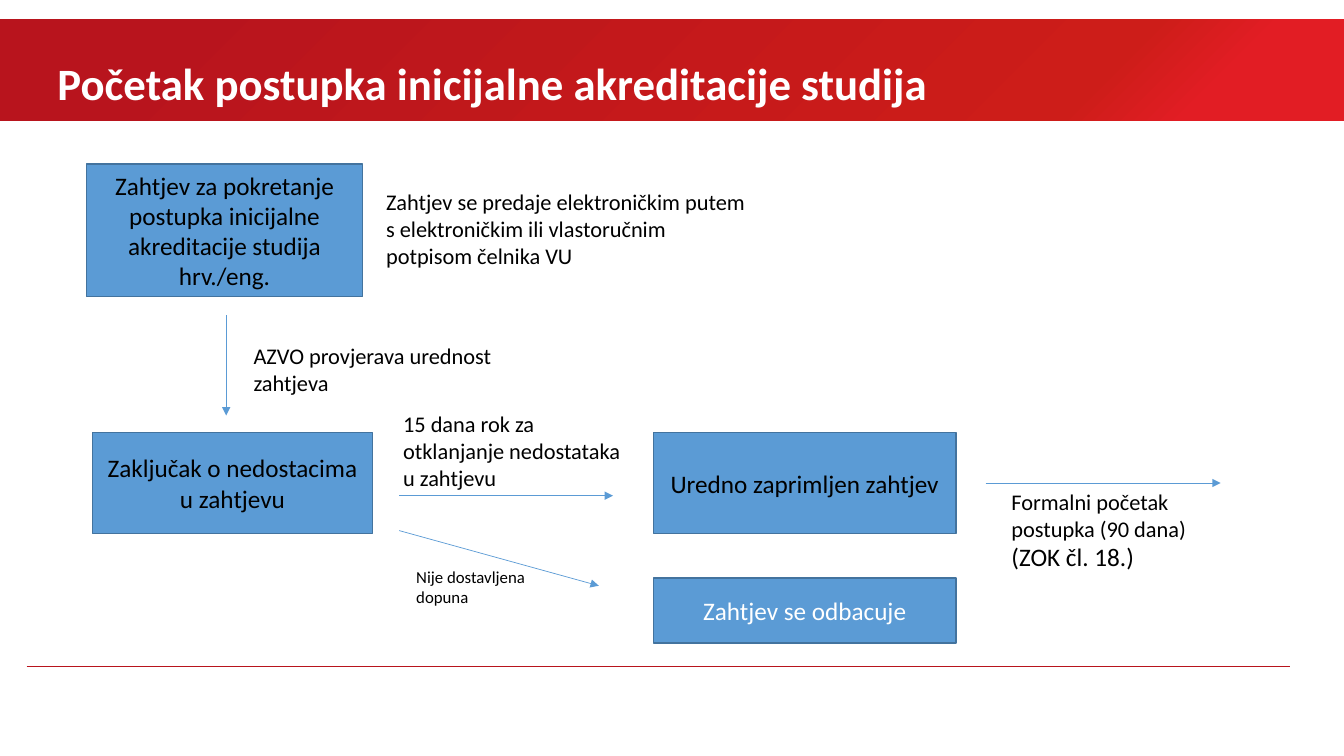
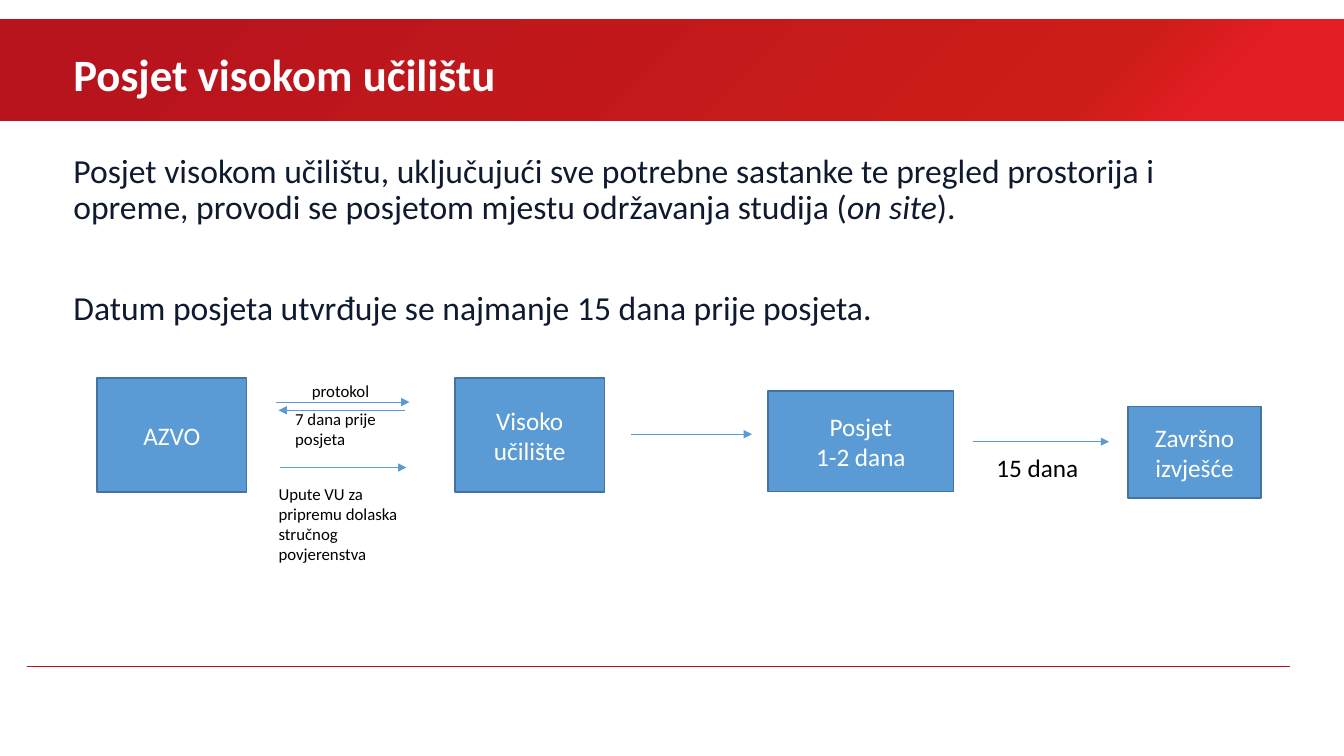
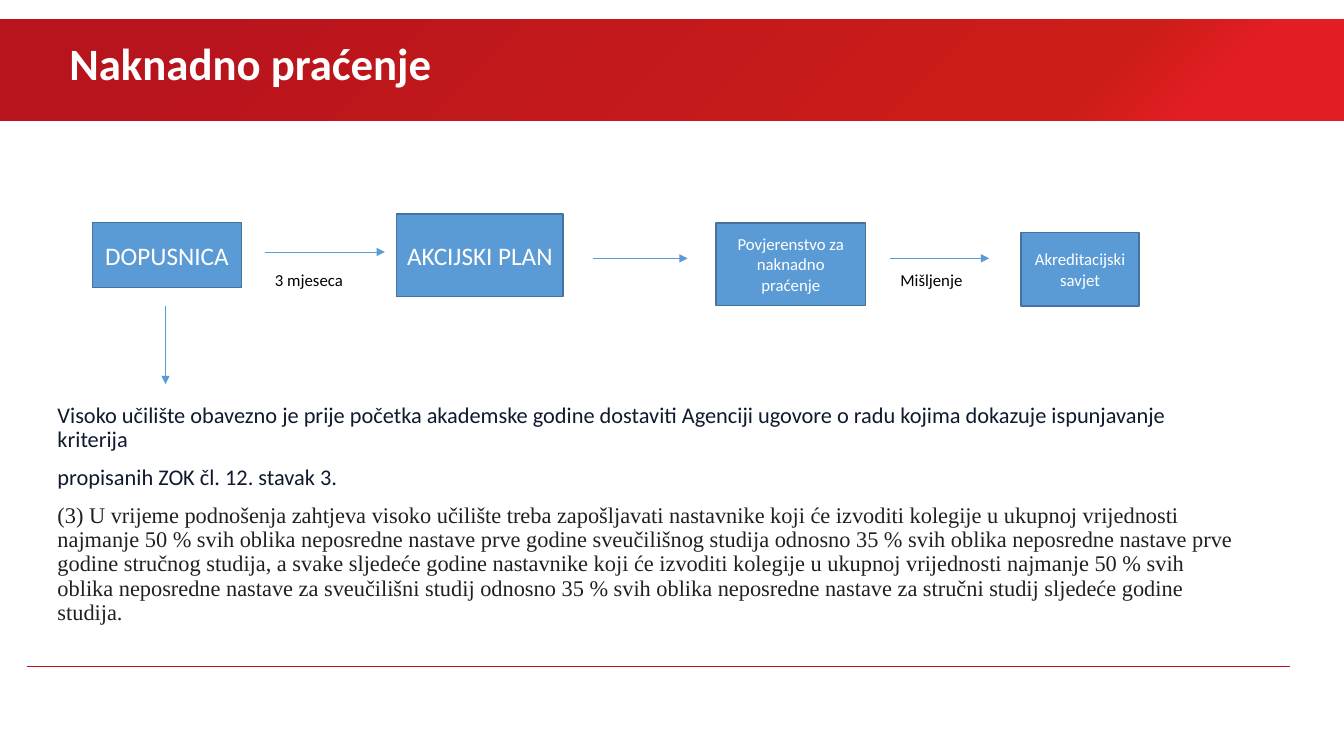
from copy import deepcopy

from pptx import Presentation
from pptx.dml.color import RGBColor
from pptx.enum.shapes import MSO_CONNECTOR as Connector, MSO_SHAPE as Shape
from pptx.enum.text import MSO_ANCHOR as Anchor, PP_ALIGN as Align
from pptx.oxml.ns import qn
from pptx.util import Cm, Pt

WIDTH, HEIGHT = 33.87, 19.05
FONT, SERIF = "Calibri", "Times New Roman"
WHITE, BLACK, NAVY, GREY = "FFFFFF", "000000", "0F1A2F", "231F20"
BLUE, BLUE_EDGE, RED = "5B9BD5", "43739E", "B8141D"
BAND_STOPS = [(0.11, "E21D24"), (0.20, "CD1D19"), (0.89, RED)]

# Places are left, top, width, height in cm; arrows are x1, y1, x2, y2.
# boxes: (place, text, size, colour)    labels: (place, [(text, size), ...])
# body paragraphs: (space before, size, font, colour, [(text, italic), ...])
SLIDES = [
    {
        "title": ((1.2, 1.27, 29.08, 1.63), "Početak postupka inicijalne akreditacije studija"),
        "boxes": [
            ((2.18, 4.13, 6.96, 3.35),
             "Zahtjev za pokretanje postupka inicijalne akreditacije studija\nhrv./eng.", 18, BLACK),
            ((2.33, 10.9, 7.06, 2.54), "Zaključak o nedostacima u zahtjevu", 18, BLACK),
            ((16.47, 10.9, 7.62, 2.54), "Uredno zaprimljen zahtjev", 18, BLACK),
            ((16.47, 14.57, 7.62, 1.63), "Zahtjev se odbacuje", 18, WHITE),
        ],
        "arrows": [
            (5.7, 7.94, 5.7, 10.47),
            (10.06, 12.49, 15.45, 12.49),
            (24.84, 12.17, 30.76, 12.17),
            (10.06, 13.37, 15.09, 14.76),
        ],
        "labels": [
            ((9.48, 4.62, 9.6, 2.31),
             [("Zahtjev se predaje elektroničkim putem s elektroničkim ili vlastoručnim "
               "potpisom čelnika VU", 16)]),
            ((6.14, 8.5, 6.96, 1.63), [("AZVO provjerava urednost zahtjeva", 16)]),
            ((9.91, 10.21, 6.05, 2.31),
             [("15 dana rok za otklanjanje nedostataka u zahtjevu", 16)]),
            ((25.24, 12.17, 6.05, 2.39),
             [("Formalni početak postupka (90 dana)", 16), ("(ZOK čl. 18.)", 18)]),
            ((10.24, 14.15, 3.76, 1.27), [("Nije dostavljena dopuna", 12)]),
        ],
    },
    {
        "title": ((1.6, 1.05, 27.66, 1.63), "Posjet visokom učilištu"),
        "body": ((1.6, 3.76, 30.35, 5.2), [
            (0, 24, FONT, NAVY, [
                ("Posjet visokom učilištu, uključujući sve potrebne sastanke te pregled "
                 "prostorija i opreme, provodi se posjetom mjestu održavanja studija (", False),
                ("on site", True),
                (").", False),
            ]),
            (46, 24, FONT, NAVY,
             [("Datum posjeta utvrđuje se najmanje 15 dana prije posjeta.", False)]),
        ]),
        "boxes": [
            ((2.45, 9.53, 3.76, 2.87), "AZVO", 18, WHITE),
            ((11.47, 9.53, 3.76, 2.87), "Visoko učilište", 18, WHITE),
            ((19.36, 9.85, 4.67, 2.54), "Posjet\n1-2 dana", 18, WHITE),
            ((28.43, 10.24, 3.35, 2.31), "Završno izvješće", 18, WHITE),
        ],
        "arrows": [
            (6.96, 10.13, 10.32, 10.13),
            (10.2, 10.34, 7.02, 10.34),
            (7.06, 11.78, 10.24, 11.78),
            (15.9, 10.94, 18.95, 10.94),
            (24.53, 11.13, 27.95, 11.13),
        ],
        "labels": [
            ((7.61, 9.47, 2.9, 0.76), [("protokol", 12)]),
            ((7.19, 10.18, 2.82, 1.27), [("7 dana prije posjeta", 12)]),
            ((6.77, 12.06, 3.76, 2.31),
             [("Upute VU za pripremu dolaska stručnog povjerenstva", 12)]),
            ((24.86, 11.28, 2.9, 1.02), [("15 dana", 18)]),
        ],
    },
    {
        "title": ((1.5, 0.77, 19.94, 1.63), "Naknadno praćenje"),
        "body": ((1.2, 10.05, 30.18, 5.8), [
            (0, 16, FONT, NAVY,
             [("Visoko učilište obavezno je prije početka akademske godine dostaviti Agenciji "
               "ugovore o radu kojima dokazuje ispunjavanje kriterija", False)]),
            (10, 16, FONT, NAVY, [("propisanih ZOK čl. 12. stavak 3.", False)]),
            (10, 16, SERIF, GREY,
             [("(3) U vrijeme podnošenja zahtjeva visoko učilište treba zapošljavati nastavnike "
               "koji će izvoditi kolegije u ukupnoj vrijednosti najmanje 50 % svih oblika "
               "neposredne nastave prve godine sveučilišnog studija odnosno 35 % svih oblika "
               "neposredne nastave prve godine stručnog studija, a svake sljedeće godine "
               "nastavnike koji će izvoditi kolegije u ukupnoj vrijednosti najmanje 50 % svih "
               "oblika neposredne nastave za sveučilišni studij odnosno 35 % svih oblika "
               "neposredne nastave za stručni studij sljedeće godine studija.", False)]),
        ]),
        "boxes": [
            ((2.33, 5.61, 3.76, 1.63), "DOPUSNICA", 18, WHITE),
            ((10, 5.39, 4.19, 2.08), "AKCIJSKI PLAN", 18, WHITE),
            ((18.04, 5.62, 3.78, 2.08), "Povjerenstvo za naknadno praćenje", 12, WHITE),
            ((25.73, 5.86, 2.98, 1.85), "Akreditacijski savjet", 12, WHITE),
        ],
        "arrows": [
            (6.68, 6.35, 9.7, 6.35),
            (14.94, 6.51, 17.33, 6.51),
            (22.43, 6.51, 24.93, 6.51),
            (4.17, 7.72, 4.17, 9.68),
        ],
        "labels": [
            ((6.68, 6.67, 2.69, 0.76), [("3 mjeseca", 12)]),
            ((22.44, 6.67, 2.49, 0.76), [("Mišljenje", 12)]),
        ],
    },
]


def rgb(value):
    return RGBColor.from_string(value)


def cm(lengths):
    return [Cm(length) for length in lengths]


def style(font, size, colour, name=FONT, bold=False):
    font.name, font.size, font.bold = name, Pt(size), bold
    font.color.rgb = rgb(colour)


def add_line(slide, ends, colour, weight):
    line = slide.shapes.add_connector(Connector.STRAIGHT, *cm(ends))
    line.line.color.rgb = rgb(colour)
    line.line.width = Pt(weight)
    properties = line.element.spPr
    properties.append(properties.makeelement(qn("a:effectLst"), {}))
    return line


def add_arrow(slide, ends):
    outline = add_line(slide, ends, BLUE, 0.5).line._get_or_add_ln()
    outline.append(outline.makeelement(qn("a:tailEnd"), {"type": "triangle"}))


def add_rectangle(slide, place):
    box = slide.shapes.add_shape(Shape.RECTANGLE, *cm(place))
    box.shadow.inherit = False
    return box


def add_box(slide, place, text, size, colour):
    box = add_rectangle(slide, place)
    box.fill.solid()
    box.fill.fore_color.rgb = rgb(BLUE)
    box.line.color.rgb = rgb(BLUE_EDGE)
    box.line.width = Pt(1)
    frame = box.text_frame
    frame.text = text
    frame.word_wrap = True
    frame.vertical_anchor = Anchor.MIDDLE
    for para in frame.paragraphs:
        para.alignment = Align.CENTER
        style(para.runs[0].font, size, colour)


def add_text(slide, place, texts):
    """Add a wrapping text box with one paragraph per text and return its paragraphs."""
    frame = slide.shapes.add_textbox(*cm(place)).text_frame
    frame.word_wrap = True
    frame.text = "\n".join(texts)
    return frame.paragraphs


def add_title(slide, place, text):
    para = add_text(slide, place, [text])[0]
    style(para.runs[0].font, 32, WHITE, bold=True)


def add_label(slide, place, lines):
    paras = add_text(slide, place, [text for text, _ in lines])
    for para, (_, size) in zip(paras, lines):
        style(para.runs[0].font, size, BLACK)


def add_body(slide, place, paragraphs):
    paras = add_text(slide, place, [""] * len(paragraphs))
    for para, (before, size, name, colour, spans) in zip(paras, paragraphs):
        para.line_spacing = 0.9
        para.space_before = Pt(before)
        for text, italic in spans:
            span = para.add_run()
            span.text = text
            style(span.font, size, colour, name)
            span.font.italic = italic


def dress_layout(layout, slide):
    """Draw the band and the footer line on the slide, then move them to its layout."""
    for holder in list(layout.placeholders):
        layout.shapes.element.remove(holder.element)
    footer = add_line(slide, (0.67, 16.79, 32.51, 16.79), RED, 1)
    band = add_rectangle(slide, (0, 0.48, WIDTH, 2.57))
    band.line.fill.background()
    band.fill.gradient()
    band.fill.gradient_angle = 135
    stop_list = band.element.xpath(".//a:gsLst")[0]
    stop_list.append(deepcopy(stop_list[-1]))
    for stop, (position, colour) in zip(band.fill.gradient_stops, BAND_STOPS):
        stop.position = position
        stop.color.rgb = rgb(colour)
    for part in (footer, band):
        layout.shapes.element.append(part.element)


def main():
    deck = Presentation()
    deck.slide_width, deck.slide_height = Cm(WIDTH), Cm(HEIGHT)
    blank = deck.slide_layouts[6]
    for number, content in enumerate(SLIDES):
        slide = deck.slides.add_slide(blank)
        if number == 0:
            dress_layout(blank, slide)
        add_title(slide, *content["title"])
        if "body" in content:
            add_body(slide, *content["body"])
        for box in content["boxes"]:
            add_box(slide, *box)
        for ends in content["arrows"]:
            add_arrow(slide, ends)
        for label in content["labels"]:
            add_label(slide, *label)
    deck.save("out.pptx")


if __name__ == "__main__":
    main()
